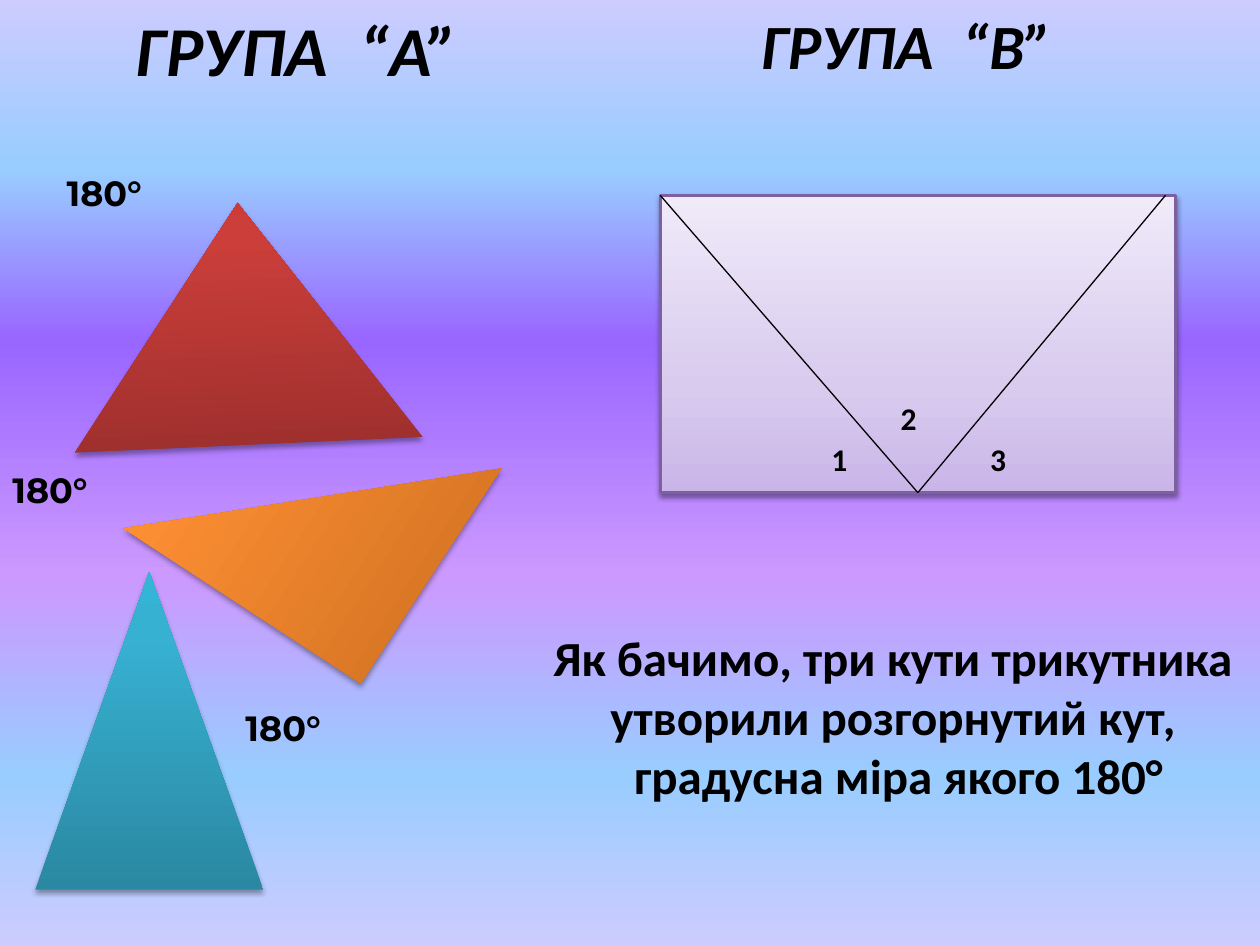
from lxml import etree
from pptx import Presentation
from pptx import util as u
from pptx.dml.color import RGBColor
from pptx.enum import shapes, text
from pptx.oxml.ns import qn

# Grid of square cells: 100 columns by 75 rows
COLS, ROWS = 100, 75
CELL = u.Inches(0.1)
SHAPE = shapes.MSO_SHAPE


def grid(*cells):
    return [round(c * CELL) for c in cells]


def color(hex_code):
    return RGBColor.from_string(hex_code)


def set_gradient(fill, element, stops, angle):
    """Fill with (percent, colour) stops; the angle runs counter-clockwise."""
    fill.gradient()
    fill.gradient_angle = angle
    gs_list = next(element.iter(qn("a:gsLst")))
    for gs in list(gs_list):
        gs_list.remove(gs)
    for percent, hex_code in stops:
        gs = etree.SubElement(gs_list, qn("a:gs"), pos=str(percent * 1000))
        etree.SubElement(gs, qn("a:srgbClr"), val=hex_code)


def add_shadow(sp, distance, opacity):
    sp.shadow.inherit = False
    effects = sp._element.spPr.find(qn("a:effectLst"))
    shadow = etree.SubElement(
        effects, qn("a:outerShdw"), blurRad=str(u.Pt(3.1)),
        dist=str(u.Pt(distance)), dir="5400000", rotWithShape="0")
    black = etree.SubElement(shadow, qn("a:srgbClr"), val="000000")
    etree.SubElement(black, qn("a:alpha"), val=str(opacity * 1000))


def add_figure(parent, kind, box, stops, rotation=0, outline=None,
               distance=1.8, opacity=35):
    sp = parent.shapes.add_shape(kind, *grid(*box))
    sp.rotation = rotation
    set_gradient(sp.fill, sp._element, stops, 90)
    if outline:
        sp.line.color.rgb = color(outline)
        sp.line.width = u.Pt(1.5)
    else:
        sp.line.fill.background()
    add_shadow(sp, distance, opacity)
    return sp


def add_ray(parent, start, rect):
    """Line from a point to the middle of the rectangle's bottom side."""
    line = parent.shapes.add_connector(
        shapes.MSO_CONNECTOR.STRAIGHT, *grid(*start),
        rect.left + rect.width // 2, rect.top + rect.height)
    line.end_connect(rect, 2)
    line.line.color.rgb = color("000000")
    line.line.width = u.Pt(0.75)
    etree.SubElement(line._element.spPr, qn("a:effectLst"))


def add_label(parent, box, lines, size, font="Calibri", italic=None, align=None):
    tf = parent.shapes.add_textbox(*grid(*box)).text_frame
    tf.word_wrap = False
    tf.auto_size = text.MSO_AUTO_SIZE.SHAPE_TO_FIT_TEXT
    for i, line in enumerate(lines):
        p = tf.add_paragraph() if i else tf.paragraphs[0]
        p.alignment = align
        r = p.add_run()
        r.text = line
        r.font.name, r.font.size = font, u.Pt(size)
        r.font.bold, r.font.italic = True, italic
        r.font.color.rgb = color("000000")


def add_straight_angle(s):
    group = s.shapes.add_group_shape()
    rect = add_figure(
        group, SHAPE.RECTANGLE, (52.4, 15.5, 40.9, 23.6),
        [(0, "C9B5E8"), (35, "D8CBEE"), (100, "F0EAF9")],
        outline="7D60A0", distance=1.6, opacity=38)
    for x in (52.4, 92.5):
        add_ray(group, (x, 15.5), rect)
    for digit, x, y in (("1", 65, 34.4), ("2", 70.5, 31.2), ("3", 77.6, 34.4)):
        add_label(group, (x, y, 3.3, 4), [digit], 18)


def add_triangles(s):
    group = s.shapes.add_group_shape()
    triangles = (
        (SHAPE.ISOSCELES_TRIANGLE, (2.8, 45.4, 18.1, 25.2), 0,
         ("2A88A2", "37B1D2", "34B4D6")),
        (SHAPE.RIGHT_TRIANGLE, (14.6, 28.3, 20.4, 22.5), 303.2,
         ("CC6E20", "FF9034", "FF9136")),
        (SHAPE.FLOWCHART_EXTRACT, (5.5, 16.1, 27.6, 19.2), 357.4,
         ("9C2F2D", "CB3E3A", "CE3B37")),
    )
    for kind, box, rotation, colors in triangles:
        add_figure(group, kind, box, list(zip((0, 80, 100), colors)), rotation)


def main():
    prs = Presentation()
    prs.slide_width, prs.slide_height = grid(COLS, ROWS)
    s = prs.slides.add_slide(prs.slide_layouts[6])
    set_gradient(s.background.fill, s._element, [
        (0, "CCCCFF"), (18, "99CCFF"), (36, "9966FF"),
        (61, "CC99FF"), (82, "99CCFF"), (100, "CCCCFF")], 270)

    # Group B: three angles laid along a line, with the conclusion
    add_straight_angle(s)
    add_label(s, (42.6, 49.3, 57.4, 15.1), [
        "Як бачимо, три кути трикутника ",
        "утворили розгорнутий кут, ",
        "градусна міра якого 180°"], 28, align=text.PP_ALIGN.CENTER)

    # Group A: three triangles
    add_triangles(s)

    # Headings
    add_label(s, (9.8, 0, 27.9, 7.7), ["ГРУПА  “А”"], 40, italic=True)
    add_label(s, (59.4, 0, 25.3, 7.1), ["ГРУПА  “В”"], 36, italic=True)

    # Angle sums beside the triangles
    for x, y in ((4.3, 13.1), (18.5, 55.6), (0, 36.7)):
        add_label(s, (x, y, 8.7, 4.4), ["180°"], 20, font="Montserrat")

    prs.save("out.pptx")


if __name__ == "__main__":
    main()
